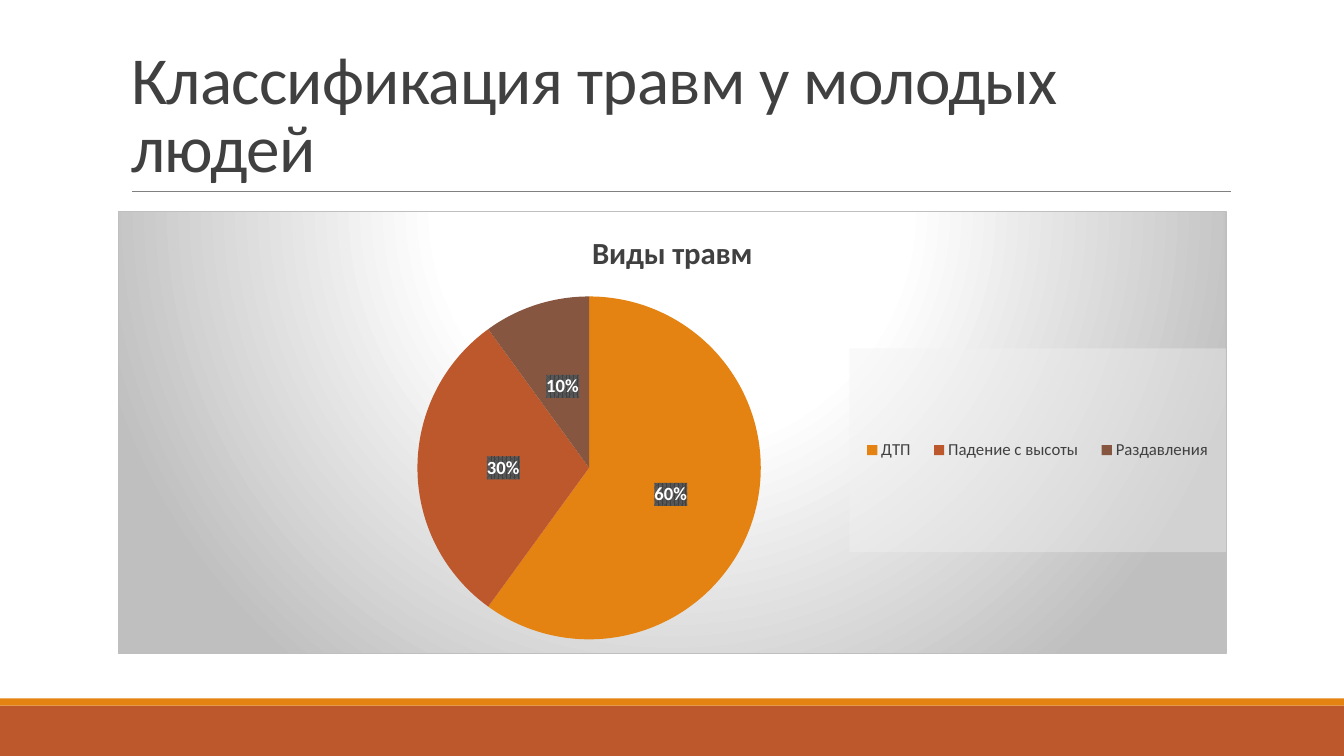
from lxml import etree
from pptx import Presentation
from pptx.chart.data import CategoryChartData
from pptx.dml.color import RGBColor
from pptx.enum.chart import XL_CHART_TYPE, XL_LABEL_POSITION, XL_LEGEND_POSITION
from pptx.enum.shapes import MSO_CONNECTOR, MSO_SHAPE
from pptx.enum.text import MSO_ANCHOR, MSO_AUTO_SIZE, PP_ALIGN
from pptx.oxml import parse_xml
from pptx.oxml.ns import nsdecls, qn
from pptx.util import Cm, Pt

PIE = XL_CHART_TYPE.PIE
LABEL_CENTER = XL_LABEL_POSITION.CENTER
LEGEND_RIGHT = XL_LEGEND_POSITION.RIGHT
STRAIGHT = MSO_CONNECTOR.STRAIGHT
RECTANGLE = MSO_SHAPE.RECTANGLE
BOTTOM = MSO_ANCHOR.BOTTOM
NO_AUTOFIT = MSO_AUTO_SIZE.NONE
LEFT = PP_ALIGN.LEFT
TITLE_ONLY = 5
WIDTH, HEIGHT = 33.87, 19.05
COLORS = {
    "orange": "E48312",
    "rust": "BD582C",
    "brown": "865640",
    "text": "404040",
    "rule": "808080",
    "white": "FFFFFF",
    "silver": "BFBFBF",
    "mist": "F2F2F2",
    "label_dots": "595959",
}


class SlideBuilder:
    font_name = "Calibri"

    def __init__(self, presentation):
        self.slide = presentation.slides.add_slide(presentation.slide_layouts[TITLE_ONLY])

    def color(self, name):
        return RGBColor.from_string(COLORS[name])

    def style_font(self, font, size, color="text", bold=False):
        font.name = self.font_name
        font.size = Pt(size)
        font.bold = bold
        font.color.rgb = self.color(color)

    def band(self, top, height, color):
        shape = self.slide.shapes.add_shape(RECTANGLE, Cm(0), Cm(top), Cm(WIDTH), Cm(height))
        shape.shadow.inherit = False
        shape.fill.solid()
        shape.fill.fore_color.rgb = self.color(color)
        shape.line.fill.background()

    def rule(self, left, right, top):
        line = self.slide.shapes.add_connector(STRAIGHT, Cm(left), Cm(top), Cm(right), Cm(top))
        line.line.color.rgb = self.color("rule")
        line.line.width = Pt(0.5)
        etree.SubElement(line._element.spPr, qn("a:effectLst"))

    def title(self, text, left, top, width, height):
        shape = self.slide.shapes.title
        shape.left, shape.top, shape.width, shape.height = map(Cm, (left, top, width, height))
        frame = shape.text_frame
        frame.word_wrap = True
        frame.auto_size = NO_AUTOFIT
        frame.vertical_anchor = BOTTOM
        paragraph = frame.paragraphs[0]
        paragraph.alignment = LEFT
        paragraph.line_spacing = 0.85
        run = paragraph.add_run()
        run.text = text
        self.style_font(run.font, 48)
        run.font._element.set("spc", "-50")

    def chart_fill(self, fill, line=""):
        return parse_xml(f'<c:spPr {nsdecls("c", "a")}>{fill}{line}</c:spPr>')

    def chart_layout(self, target, **fractions):
        inner = f'<c:layoutTarget val="{target}"/>' if target else ""
        modes = '<c:xMode val="edge"/><c:yMode val="edge"/>'
        sizes = "".join(f'<c:{key} val="{value}"/>' for key, value in fractions.items())
        return parse_xml(
            f'<c:layout {nsdecls("c")}><c:manualLayout>{inner}{modes}{sizes}'
            "</c:manualLayout></c:layout>"
        )

    def solid(self, color, inside=""):
        return f'<a:srgbClr val="{COLORS[color]}">{inside}</a:srgbClr>'

    def pie(self, title, slices, left, top, width, height):
        data = CategoryChartData()
        data.categories = [name for name, _, _ in slices]
        data.add_series(title, [value for _, value, _ in slices])
        frame = self.slide.shapes.add_chart(PIE, *map(Cm, (left, top, width, height)), data)
        chart = frame.chart
        self.style_font(chart.font, 10)
        self.chart_title(chart, title)
        self.background(chart)
        plot = chart.plots[0]
        plot.vary_by_categories = True
        for index, (_, _, color) in enumerate(slices):
            fill = plot.series[0].points[index].format.fill
            fill.solid()
            fill.fore_color.rgb = self.color(color)
        self.percent_labels(plot.series[0].data_labels)
        self.legend(chart)

    def chart_title(self, chart, text):
        chart.has_title = True
        run = chart.chart_title.text_frame.paragraphs[0].add_run()
        run.text = text
        self.style_font(run.font, 22, bold=True)
        chart.chart_title.include_in_layout = False

    def background(self, chart):
        stops = "".join(
            f'<a:gs pos="{position * 1000}">{self.solid(color)}</a:gs>'
            for position, color in ((0, "white"), (39, "white"), (100, "silver"))
        )
        gradient = (
            f'<a:gradFill><a:gsLst>{stops}</a:gsLst><a:path path="circle">'
            '<a:fillToRect l="50000" t="-80000" r="50000" b="180000"/></a:path></a:gradFill>'
        )
        border = f'<a:ln w="{Pt(0.75)}"><a:solidFill>{self.solid("silver")}</a:solidFill></a:ln>'
        chart_element = chart._chartSpace.find(qn("c:chart"))
        chart_element.addnext(self.chart_fill(gradient, border))
        plot_area = chart_element.find(qn("c:plotArea"))
        for layout in plot_area.findall(qn("c:layout")):
            plot_area.remove(layout)
        plot_area.insert(0, self.chart_layout("inner", x=0.27, y=0.19, w=0.31, h=0.78))

    def percent_labels(self, labels):
        labels.show_percentage = True
        labels.show_value = False
        labels.number_format = "0%"
        labels.number_format_is_linked = False
        labels.position = LABEL_CENTER
        self.style_font(labels.font, 13.3, "white", bold=True)
        pattern = (
            f'<a:pattFill prst="pct75"><a:fgClr>{self.solid("text")}</a:fgClr>'
            f'<a:bgClr>{self.solid("label_dots")}</a:bgClr></a:pattFill>'
        )
        labels._element.find(qn("c:txPr")).addprevious(self.chart_fill(pattern))

    def legend(self, chart):
        chart.has_legend = True
        legend = chart.legend
        legend.position = LEGEND_RIGHT
        legend.include_in_layout = False
        self.style_font(legend.font, 12)
        overlay = legend._element.find(qn("c:overlay"))
        for layout in legend._element.findall(qn("c:layout")):
            legend._element.remove(layout)
        overlay.addprevious(self.chart_layout("", x=0.66, y=0.31, w=0.34, h=0.46))
        veil = self.solid("mist", '<a:alpha val="39000"/>')
        overlay.addnext(self.chart_fill(f"<a:solidFill>{veil}</a:solidFill>"))


def main():
    presentation = Presentation()
    presentation.slide_width = Cm(WIDTH)
    presentation.slide_height = Cm(HEIGHT)
    builder = SlideBuilder(presentation)
    builder.band(17.78, 1.27, "rust")
    builder.band(17.6, 0.18, "orange")
    builder.rule(3.33, 31.01, 4.83)
    builder.title("Классификация травм у молодых людей", 3.05, 0.79, 27.94, 4.04)
    slices = [
        ("ДТП", 60, "orange"),
        ("Падение с высоты", 30, "rust"),
        ("Раздавления", 10, "brown"),
    ]
    builder.pie("Виды травм", slices, 2.97, 5.31, 27.94, 11.18)
    presentation.save("out.pptx")


if __name__ == "__main__":
    main()
